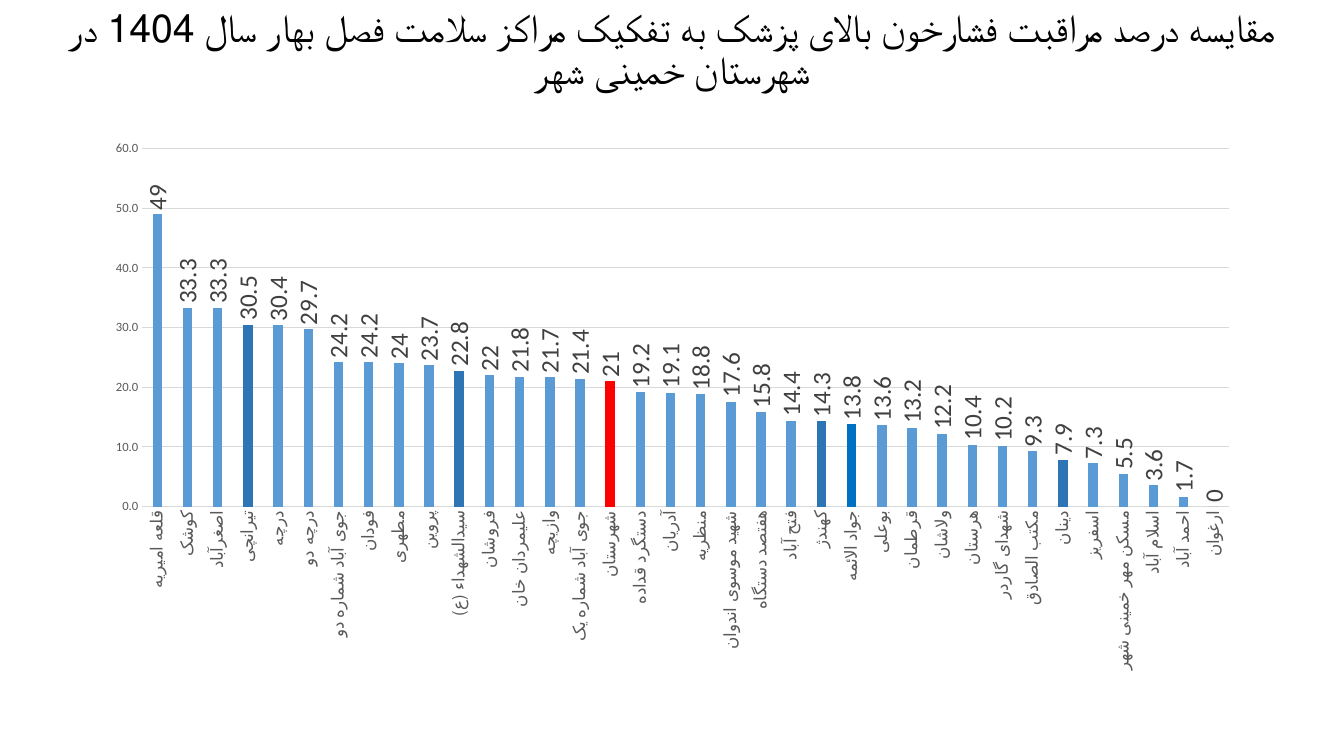
from pptx import Presentation
from pptx import util as u
from pptx.chart import data as chart_data
from pptx.dml.color import RGBColor
from pptx.enum import chart as ch
from pptx.enum import text

BLACK = RGBColor(0x00, 0x00, 0x00)
AXIS_TEXT = RGBColor(0x59, 0x59, 0x59)
LABEL_TEXT = RGBColor(0x40, 0x40, 0x40)
GRID = RGBColor(0xD9, 0xD9, 0xD9)
BAR = RGBColor(0x5B, 0x9B, 0xD5)
DARK_BAR = RGBColor(0x2E, 0x75, 0xB6)
BRIGHT_BAR = RGBColor(0x00, 0x70, 0xC0)
COUNTY_BAR = RGBColor(0xFF, 0x00, 0x00)

TITLE = ("مقایسه درصد مراقبت فشارخون بالای پزشک به تفکیک مراکز سلامت "
         "فصل بهار سال 1404 در شهرستان خمینی شهر")

CARE_RATES = {
    "قلعه امیریه": 49, "کوشک": 33.3, "اصغرآباد": 33.3, "تیرانچی": 30.5,
    "درچه": 30.4, "درچه دو": 29.7, "جوی آباد شماره دو": 24.2,
    "فودان": 24.2, "مطهری": 24, "پروین": 23.7, "سیدالشهداء (ع)": 22.8,
    "فروشان": 22, "علیمردان خان": 21.8, "وازیچه": 21.7,
    "جوی آباد شماره یک": 21.4, "شهرستان": 21, "دستگرد قداده": 19.2,
    "آدریان": 19.1, "منظریه": 18.8, "شهید موسوی اندوان": 17.6,
    "هفتصد دستگاه": 15.8, "فتح آباد": 14.4, "کهندژ": 14.3,
    "جواد الائمه": 13.8, "بوعلی": 13.6, "قرطمان": 13.2, "ولاشان": 12.2,
    "هرستان": 10.4, "شهدای گاردر": 10.2, "مکتب الصادق": 9.3,
    "دینان": 7.9, "اسفریز": 7.3, "مسکن مهر خمینی شهر": 5.5,
    "اسلام آباد": 3.6, "احمد آباد": 1.7, "ارغوان": 0,
}

HIGHLIGHTS = {
    "تیرانچی": DARK_BAR, "سیدالشهداء (ع)": DARK_BAR, "شهرستان": COUNTY_BAR,
    "کهندژ": DARK_BAR, "جواد الائمه": BRIGHT_BAR, "دینان": DARK_BAR,
}


def style_font(font, size, color, name="Calibri"):
    font.size = u.Pt(size)
    font.name = name
    font.bold = False
    font.color.rgb = color


def write(paragraph, content, size=18, color=BLACK, align=text.PP_ALIGN.CENTER,
          spacing=1.0, rtl=False):
    paragraph.alignment = align
    paragraph.line_spacing = spacing
    if rtl:
        paragraph._p.get_or_add_pPr().set("rtl", "1")
    run = paragraph.add_run()
    run.text = content
    style_font(run.font, size, color)


class Deck:
    COLUMNS = 100
    ROWS = 100

    def __init__(self, width, height):
        self.presentation = Presentation()
        self.presentation.slide_width = u.Inches(width)
        self.presentation.slide_height = u.Inches(height)
        self.slide = self.presentation.slides.add_slide(
            self.presentation.slide_layouts[6])

    def place(self, column, row, columns, rows):
        across = self.presentation.slide_width / self.COLUMNS
        down = self.presentation.slide_height / self.ROWS
        return (u.Emu(round(column * across)), u.Emu(round(row * down)),
                u.Emu(round(columns * across)), u.Emu(round(rows * down)))

    def title(self, content, *cells):
        frame = self.slide.shapes.add_textbox(*self.place(*cells)).text_frame
        frame.word_wrap = True
        frame.vertical_anchor = text.MSO_ANCHOR.MIDDLE
        write(frame.paragraphs[0], content, size=28, spacing=0.9, rtl=True)

    def column_chart(self, rates, highlights, *cells):
        table = chart_data.CategoryChartData()
        table.categories = list(rates)
        table.add_series("Series 1", list(rates.values()))
        chart = self.slide.shapes.add_chart(
            ch.XL_CHART_TYPE.COLUMN_CLUSTERED, *self.place(*cells), table).chart
        style_font(chart.font, 10, BLACK)
        chart.has_legend = False
        chart.has_title = False
        self.axes(chart)
        self.bars(chart.plots[0], rates, highlights)
        for body in chart.element.xpath(
                ".//c:catAx/c:txPr/a:bodyPr | .//c:dLbls/c:txPr/a:bodyPr"):
            body.set("rot", "-5400000")
            body.set("vert", "horz")

    def axes(self, chart):
        centers, percent = chart.category_axis, chart.value_axis
        for axis, size in ((centers, 12), (percent, 9)):
            axis.major_tick_mark = ch.XL_TICK_MARK.NONE
            axis.minor_tick_mark = ch.XL_TICK_MARK.NONE
            style_font(axis.tick_labels.font, size, AXIS_TEXT)
        percent.minimum_scale, percent.maximum_scale = 0, 60
        percent.major_unit = 10
        percent.tick_labels.number_format = "0.0"
        percent.tick_labels.number_format_is_linked = False
        percent.format.line.fill.background()
        for line in (centers.format.line, percent.major_gridlines.format.line):
            line.color.rgb = GRID
            line.width = u.Pt(0.75)

    def bars(self, plot, rates, highlights):
        plot.gap_width = 219
        plot.overlap = -27
        plot.vary_by_categories = False
        series = plot.series[0]
        series.format.fill.solid()
        series.format.fill.fore_color.rgb = BAR
        for index, center in enumerate(rates):
            if center in highlights:
                fill = series.points[index].format.fill
                fill.solid()
                fill.fore_color.rgb = highlights[center]
        labels = series.data_labels
        labels.show_value = True
        labels.position = ch.XL_LABEL_POSITION.OUTSIDE_END
        style_font(labels.font, 18, LABEL_TEXT)

    def save(self):
        self.presentation.save("out.pptx")


def main():
    deck = Deck(13.33, 7.5)
    deck.title(TITLE, 1.73, 0, 96.55, 13.47)
    deck.column_chart(CARE_RATES, HIGHLIGHTS, 6.9, 17.2, 86.27, 72.93)
    deck.save()


if __name__ == "__main__":
    main()
